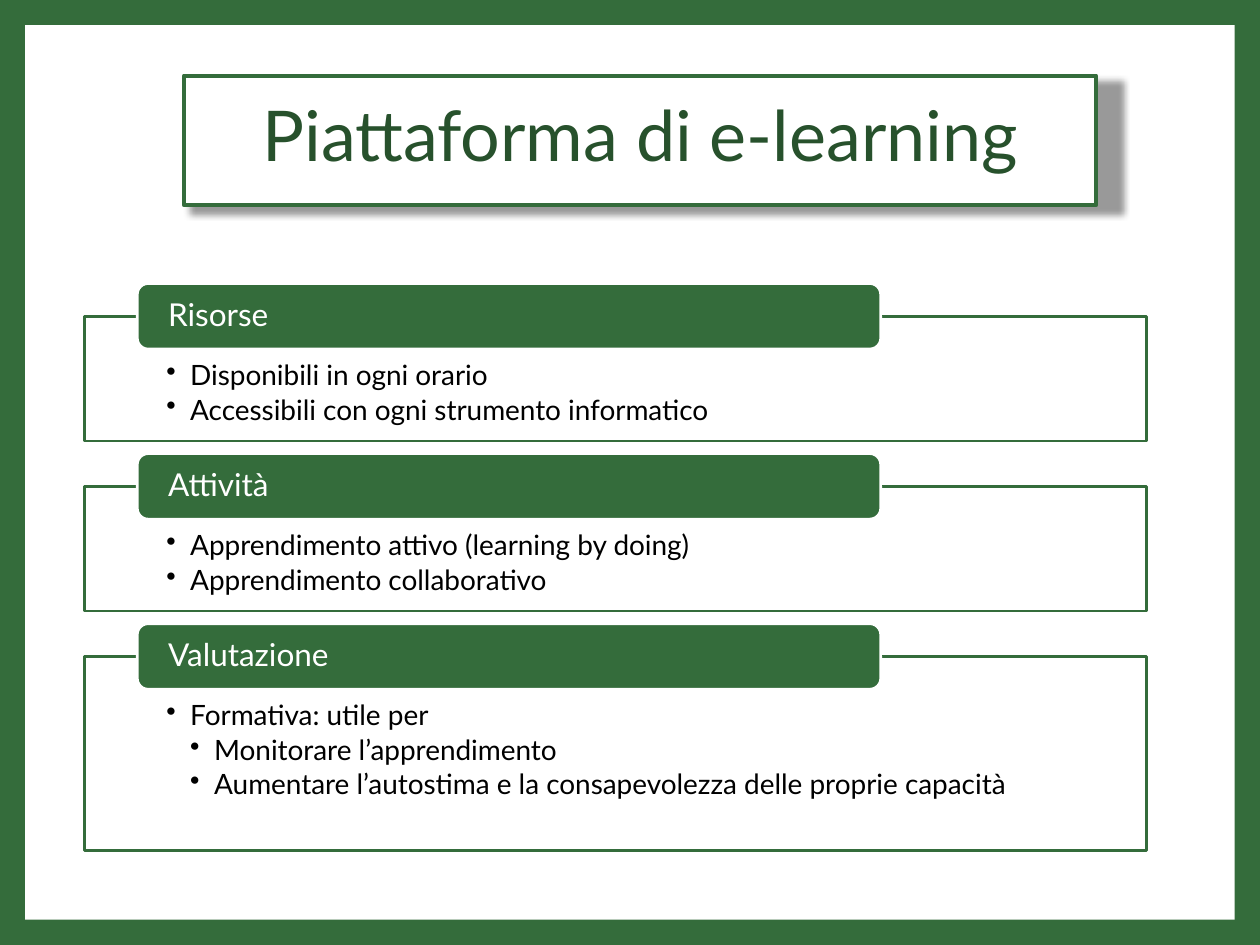
from dataclasses import dataclass

from lxml.etree import SubElement
from pptx import Presentation
from pptx.dml.color import RGBColor
from pptx.enum.shapes import MSO_SHAPE as Form
from pptx.enum.text import MSO_ANCHOR as Anchor, PP_ALIGN as Align
from pptx.oxml.ns import qn
from pptx.shapes.autoshape import Shape
from pptx.slide import Slide
from pptx.text.text import _Paragraph as Para
from pptx.util import Inches, Pt

GREEN = RGBColor(0x34, 0x6C, 0x3B)
DARK = RGBColor(0x27, 0x51, 0x2C)
WHITE = RGBColor(0xFF, 0xFF, 0xFF)
BLACK = RGBColor(0x00, 0x00, 0x00)
FONT = "Lato"

LEFT, WIDTH = 0.67, 8.43   # panels
FIRST, GAP = 2.51, 0.36
RISE = 0.26                # tab above its panel
STEP = 0.19                # bullet indent


@dataclass
class Item:
    text: str
    level: int = 1


@dataclass
class Panel:
    title: str
    height: float
    items: list[Item]


PANELS = [
    Panel("Risorse", 0.99, [
        Item("Disponibili in ogni orario"),
        Item("Accessibili con ogni strumento informatico"),
    ]),
    Panel("Attività", 0.99, [
        Item("Apprendimento attivo (learning by doing)"),
        Item("Apprendimento collaborativo"),
    ]),
    Panel("Valutazione", 1.54, [
        Item("Formativa: utile per"),
        Item("Monitorare l’apprendimento", 2),
        Item("Aumentare l’autostima e la consapevolezza delle proprie capacità", 2),
    ]),
]


def add_box(slide: Slide, form: Form, at: tuple, fill: RGBColor,
            line: RGBColor | None = None, weight: float = 1.5) -> Shape:
    box = slide.shapes.add_shape(form, *(Inches(n) for n in at))
    box.shadow.inherit = False
    box.fill.solid()
    box.fill.fore_color.rgb = fill
    if line is None:
        box.line.fill.background()
    else:
        box.line.color.rgb = line
        box.line.width = Pt(weight)
    return box


def set_frame(box: Shape, anchor: Anchor, side: float, top: float, low: float) -> None:
    frame = box.text_frame
    frame.word_wrap = True
    frame.vertical_anchor = anchor
    frame.margin_left = frame.margin_right = Inches(side)
    frame.margin_top, frame.margin_bottom = Inches(top), Inches(low)


def add_text(para: Para, text: str, size: float, color: RGBColor,
             align: Align = Align.LEFT, space: float = 0.9) -> None:
    para.alignment = align
    para.line_spacing = space
    run = para.add_run()
    run.text = text
    run.font.name = FONT
    run.font.size = Pt(size)
    run.font.color.rgb = color


def add_bullet(para: Para, level: int) -> None:
    para.level = level
    props = para._p.get_or_add_pPr()
    props.set("marL", str(Inches(STEP * level)))
    props.set("indent", str(-Inches(STEP)))
    SubElement(props, qn("a:buChar"), char="•")


def set_alpha(box: Shape, share: int) -> None:
    color = box._element.spPr.find(qn("a:solidFill"))[0]
    SubElement(color, qn("a:alpha"), val=str(share * 1000))


def add_shadow(box: Shape) -> None:
    effects = box._element.spPr.find(qn("a:effectLst"))
    cast = SubElement(effects, qn("a:outerShdw"), blurRad=str(Pt(4)), dist=str(Inches(0.07)),
                      dir="2700000", sx="102000", algn="tl", rotWithShape="0")
    color = SubElement(cast, qn("a:srgbClr"), val=str(BLACK))
    SubElement(color, qn("a:alpha"), val="40000")


def add_panel(slide: Slide, panel: Panel, top: float) -> None:
    # Body with bullets
    body = add_box(slide, Form.RECTANGLE, (LEFT, top, WIDTH, panel.height), WHITE, GREEN)
    set_alpha(body, 90)
    set_frame(body, Anchor.TOP, 0.65, 0.36, 0.12)
    frame = body.text_frame
    for i, item in enumerate(panel.items):
        para = frame.add_paragraph() if i else frame.paragraphs[0]
        add_text(para, item.text, 16, BLACK)
        para.space_after = Pt(2.4)
        add_bullet(para, item.level)

    # Tab with heading
    tab = add_box(slide, Form.ROUNDED_RECTANGLE, (1.09, top - RISE, 5.9, 0.52), GREEN, WHITE)
    set_frame(tab, Anchor.MIDDLE, 0.22, 0, 0)
    add_text(tab.text_frame.paragraphs[0], panel.title, 18, WHITE)


def main() -> None:
    deck = Presentation()
    deck.slide_width, deck.slide_height = Inches(10), Inches(7.5)
    slide = deck.slides.add_slide(deck.slide_layouts[6])

    # Green border around a white page
    slide.background.fill.solid()
    slide.background.fill.fore_color.rgb = GREEN
    add_box(slide, Form.RECTANGLE, (0.2, 0.2, 9.6, 7.1), WHITE)

    # Title
    title = add_box(slide, Form.RECTANGLE, (1.46, 0.6, 7.24, 1.03), WHITE, GREEN, 2.25)
    add_shadow(title)
    set_frame(title, Anchor.TOP, 0.1, 0.05, 0.05)
    add_text(title.text_frame.paragraphs[0], "Piattaforma di e-learning",
             40, DARK, Align.CENTER, 1.12)

    # Panels, one below the other
    top = FIRST
    for panel in PANELS:
        add_panel(slide, panel, top)
        top += panel.height + GAP

    deck.save("out.pptx")


if __name__ == "__main__":
    main()
